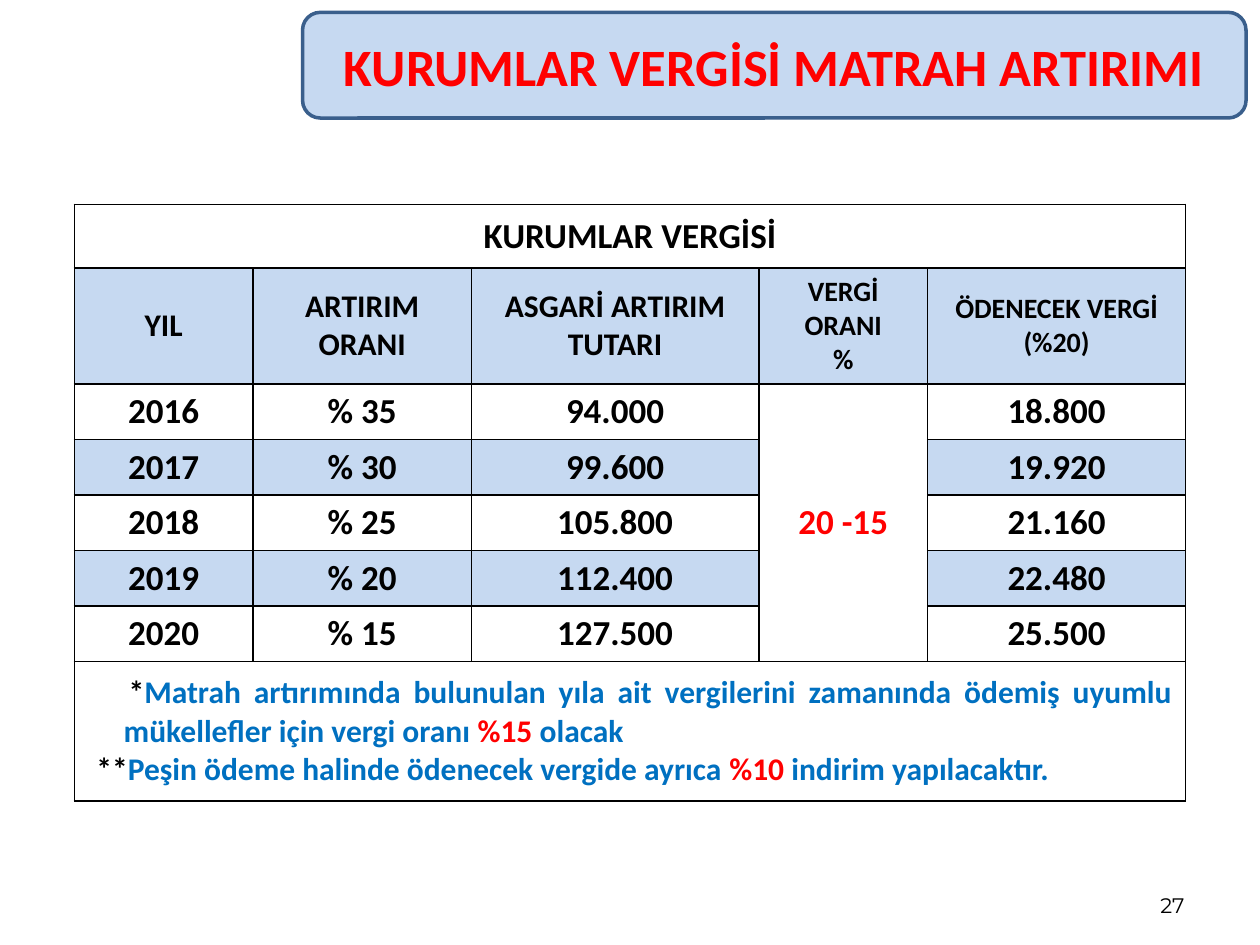
from dataclasses import dataclass

from pptx import Presentation
from pptx import oxml
from pptx import util as u
from pptx.dml.color import RGBColor
from pptx.enum import shapes, text
from pptx.oxml import ns


@dataclass(frozen=True)
class Theme:
    black: str = "000000"
    red: str = "FF0000"
    blue: str = "0070C0"
    pale: str = "C6D9F1"
    outline: str = "3A5F8C"
    font: str = "Calibri"
    number_font: str = "Montserrat"
    title: int = 30
    large: int = 20
    medium: int = 18
    small: int = 16
    number: int = 12


THEME = Theme()
COLUMN_WIDTHS = (3.6, 4.4, 5.8, 3.4, 5.2)
YEAR_HEIGHT = 1.12
ROW_HEIGHTS = (1.28, 2.34, *[YEAR_HEIGHT] * 5, 2.81)
RATE_COLUMN = 3
HEADERS = (
    ("YIL", THEME.medium),
    ("ARTIRIM ORANI", THEME.medium),
    ("ASGARİ ARTIRIM TUTARI", THEME.medium),
    ("VERGİ ORANI\n%", THEME.small),
    ("ÖDENECEK VERGİ (%20)", THEME.small),
)
YEARS = (
    ("2016", "% 35", "94.000", "20 -15", "18.800"),
    ("2017", "% 30", "99.600", "", "19.920"),
    ("2018", "% 25", "105.800", "", "21.160"),
    ("2019", "% 20", "112.400", "", "22.480"),
    ("2020", "% 15", "127.500", "", "25.500"),
)
NOTES = (
    (0.1, (
        ("*", THEME.black),
        ("Matrah artırımında bulunulan yıla ait vergilerini zamanında ödemiş "
         "uyumlu mükellefler için vergi oranı ", THEME.blue),
        ("%15 ", THEME.red),
        ("olacak", THEME.blue),
    )),
    (-0.55, (
        ("**", THEME.black),
        ("Peşin ödeme halinde ödenecek vergide ayrıca ", THEME.blue),
        ("%10 ", THEME.red),
        ("indirim yapılacaktır.", THEME.blue),
    )),
)


def add_run(paragraph, content, size, color=THEME.black, bold=True, font=THEME.font):
    run = paragraph.add_run()
    run.text = content
    run.font.name = font
    run.font.size = u.Pt(size)
    run.font.bold = bold
    run.font.color.rgb = RGBColor.from_string(color)


def write(frame, content, align=text.PP_ALIGN.CENTER, **run_format):
    for index, line in enumerate(content.split("\n")):
        paragraph = frame.add_paragraph() if index else frame.paragraphs[0]
        paragraph.alignment = align
        add_run(paragraph, line, **run_format)


def place(shape, left, top, width, height):
    shape.left, shape.top = u.Cm(left), u.Cm(top)
    shape.width, shape.height = u.Cm(width), u.Cm(height)


def add_banner(slide):
    banner = slide.shapes.add_shape(
        shapes.MSO_SHAPE.ROUNDED_RECTANGLE, u.Cm(6.1), u.Cm(0.25), u.Cm(19.02), u.Cm(2.13))
    banner.shadow.inherit = False
    banner.fill.solid()
    banner.fill.fore_color.rgb = RGBColor.from_string(THEME.pale)
    banner.line.color.rgb = RGBColor.from_string(THEME.outline)
    banner.line.width = u.Pt(2)
    slide.shapes.title.element.addprevious(banner.element)


def set_title(slide, content):
    title = slide.shapes.title
    place(title, 6.5, 0.53, 18.21, 1.6)
    frame = title.text_frame
    frame.word_wrap = True
    frame.auto_size = text.MSO_AUTO_SIZE.NONE
    frame.vertical_anchor = text.MSO_ANCHOR.MIDDLE
    write(frame, content, size=THEME.title, color=THEME.red)


def add_page_number(slide, content):
    box = slide.shapes.add_textbox(u.Cm(18.21), u.Cm(17.35), u.Cm(5.92), u.Cm(1.27))
    frame = box.text_frame
    frame.word_wrap = True
    frame.vertical_anchor = text.MSO_ANCHOR.BOTTOM
    write(frame, content, align=text.PP_ALIGN.RIGHT, size=THEME.number,
          bold=False, font=THEME.number_font)


def style_cell(cell, shaded):
    properties = cell._tc.get_or_add_tcPr()
    for side in ("lnL", "lnR", "lnT", "lnB"):
        properties.append(oxml.parse_xml(
            f'<a:{side} {ns.nsdecls("a")} w="{u.Pt(1)}"><a:solidFill>'
            f'<a:srgbClr val="{THEME.black}"/></a:solidFill></a:{side}>'))
    cell.vertical_anchor = text.MSO_ANCHOR.MIDDLE
    if shaded:
        cell.fill.solid()
        cell.fill.fore_color.rgb = RGBColor.from_string(THEME.pale)
    else:
        cell.fill.background()


def write_notes(frame):
    for index, (indent, runs) in enumerate(NOTES):
        paragraph = frame.add_paragraph() if index else frame.paragraphs[0]
        paragraph.alignment = text.PP_ALIGN.JUSTIFY
        properties = paragraph._p.get_or_add_pPr()
        properties.set("marL", str(u.Cm(0.74)))
        properties.set("indent", str(u.Cm(indent)))
        for content, color in runs:
            add_run(paragraph, content, THEME.medium, color)


def add_tax_table(slide):
    table = slide.shapes.add_table(
        len(ROW_HEIGHTS), len(COLUMN_WIDTHS), u.Cm(1.5), u.Cm(4.12),
        u.Cm(sum(COLUMN_WIDTHS)), u.Cm(sum(ROW_HEIGHTS))).table
    table.first_row = table.horz_banding = False
    for column, width in zip(table.columns, COLUMN_WIDTHS):
        column.width = u.Cm(width)
    last_row, last_column = len(ROW_HEIGHTS) - 1, len(COLUMN_WIDTHS) - 1
    for index, height in enumerate(ROW_HEIGHTS):
        table.rows[index].height = u.Cm(height)
        for column in range(last_column + 1):
            merged_rate = column == RATE_COLUMN and index > 1
            shaded = index % 2 == 1 and index < last_row and not merged_rate
            style_cell(table.cell(index, column), shaded)
    for row in (0, last_row):
        table.cell(row, 0).merge(table.cell(row, last_column))
    table.cell(2, RATE_COLUMN).merge(table.cell(last_row - 1, RATE_COLUMN))

    write(table.cell(0, 0).text_frame, "KURUMLAR VERGİSİ", size=THEME.large)
    for column, (content, size) in enumerate(HEADERS):
        write(table.cell(1, column).text_frame, content, size=size)
    for row, values in enumerate(YEARS, start=2):
        for column, value in enumerate(values):
            if value:
                color = THEME.red if column == RATE_COLUMN else THEME.black
                write(table.cell(row, column).text_frame, value,
                      size=THEME.large, color=color)
            else:
                table.cell(row, column).text_frame.paragraphs[0].font.size = u.Pt(THEME.large)
    write_notes(table.cell(last_row, 0).text_frame)


def main():
    presentation = Presentation()
    presentation.slide_width, presentation.slide_height = u.Cm(25.4), u.Cm(19.05)
    slide = presentation.slides.add_slide(presentation.slide_layouts[0])
    subtitle = slide.placeholders[1].element
    subtitle.getparent().remove(subtitle)
    add_banner(slide)
    add_page_number(slide, "27")
    set_title(slide, "KURUMLAR VERGİSİ MATRAH ARTIRIMI")
    add_tax_table(slide)
    presentation.save("out.pptx")


if __name__ == "__main__":
    main()
